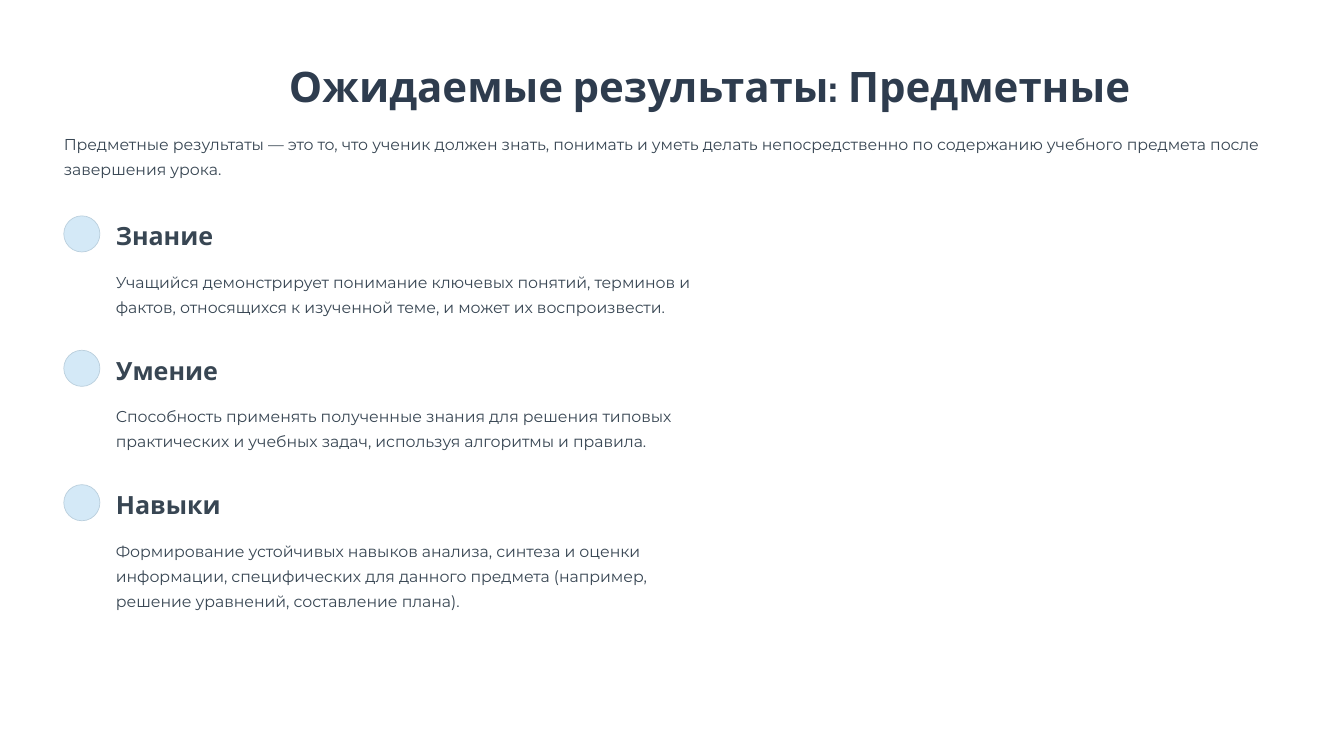
from dataclasses import dataclass

from pptx import Presentation
from pptx.dml.color import RGBColor
from pptx.enum.shapes import MSO_SHAPE as Preset
from pptx.enum.text import MSO_ANCHOR as Anchor, MSO_AUTO_SIZE as AutoSize
from pptx.slide import Slide
from pptx.util import Inches, Pt

COLORS = {
    "background": "FFFFFF",
    "title": "2E3C4E",
    "text": "384653",
    "marker": "D4E9F7",
    "marker_line": "BACFDD",
}
MARGIN = 0.76
INDENT = 1.38
FIRST_TOP = 2.57
STEP = 1.6
MARKER_SIZE = 0.43


@dataclass(frozen=True)
class TextStyle:
    font: str
    size: float
    line_height: float
    color: str
    bold: bool = False
    wrap: bool = False


@dataclass(frozen=True)
class Outcome:
    heading: str
    description: str
    height: float = 0.61


TITLE = TextStyle("Cabin", 36, 45, "title", bold=True)
HEADING = TextStyle("Cabin", 21.5, 27, "text", bold=True)
BODY = TextStyle("Montserrat", 13.5, 21.5, "text", wrap=True)

OUTCOMES = [
    Outcome(
        "Знание",
        "Учащийся демонстрирует понимание ключевых понятий, терминов и фактов, "
        "относящихся к изученной теме, и может их воспроизвести.",
    ),
    Outcome(
        "Умение",
        "Способность применять полученные знания для решения типовых "
        "практических и учебных задач, используя алгоритмы и правила.",
    ),
    Outcome(
        "Навыки",
        "Формирование устойчивых навыков анализа, синтеза и оценки информации, "
        "специфических для данного предмета (например, решение уравнений, "
        "составление плана).",
        height=0.92,
    ),
]


def color(name: str) -> RGBColor:
    return RGBColor.from_string(COLORS[name])


def add_text(page: Slide, text: str, left: float, top: float,
             width: float, height: float, style: TextStyle) -> None:
    box = page.shapes.add_textbox(
        Inches(left), Inches(top), Inches(width), Inches(height))
    frame = box.text_frame
    frame.margin_left = frame.margin_right = 0
    frame.margin_top = frame.margin_bottom = 0
    frame.word_wrap = style.wrap
    frame.auto_size = AutoSize.NONE
    frame.vertical_anchor = Anchor.TOP
    para = frame.paragraphs[0]
    para.line_spacing = Pt(style.line_height)
    span = para.add_run()
    span.text = text
    span.font.name = style.font
    span.font.size = Pt(style.size)
    span.font.bold = style.bold
    span.font.color.rgb = color(style.color)


def add_marker(page: Slide, top: float) -> None:
    marker = page.shapes.add_shape(
        Preset.ROUNDED_RECTANGLE, Inches(MARGIN), Inches(top),
        Inches(MARKER_SIZE), Inches(MARKER_SIZE))
    marker.adjustments[0] = 0.67
    marker.shadow.inherit = False
    marker.fill.solid()
    marker.fill.fore_color.rgb = color("marker")
    marker.line.color.rgb = color("marker_line")
    marker.line.width = Pt(0.6)


def add_outcome(page: Slide, outcome: Outcome, top: float) -> None:
    add_marker(page, top)
    add_text(page, outcome.heading, INDENT, top + 0.04, 3.01, 0.38, HEADING)
    add_text(page, outcome.description, INDENT, top + 0.6, 7.13,
             outcome.height, BODY)


def main() -> None:
    deck = Presentation()
    deck.slide_width = Inches(16)
    deck.slide_height = Inches(9)
    page = deck.slides.add_slide(deck.slide_layouts[6])
    page.background.fill.solid()
    page.background.fill.fore_color.rgb = color("background")

    add_text(page, "Ожидаемые результаты: Предметные",
             3.44, 0.7, 10.14, 0.63, TITLE)
    add_text(
        page,
        "Предметные результаты — это то, что ученик должен знать, понимать и "
        "уметь делать непосредственно по содержанию учебного предмета после "
        "завершения урока.",
        MARGIN, 1.53, 14.47, 0.61, BODY)
    for index, outcome in enumerate(OUTCOMES):
        add_outcome(page, outcome, FIRST_TOP + index * STEP)

    deck.save("out.pptx")


if __name__ == "__main__":
    main()
